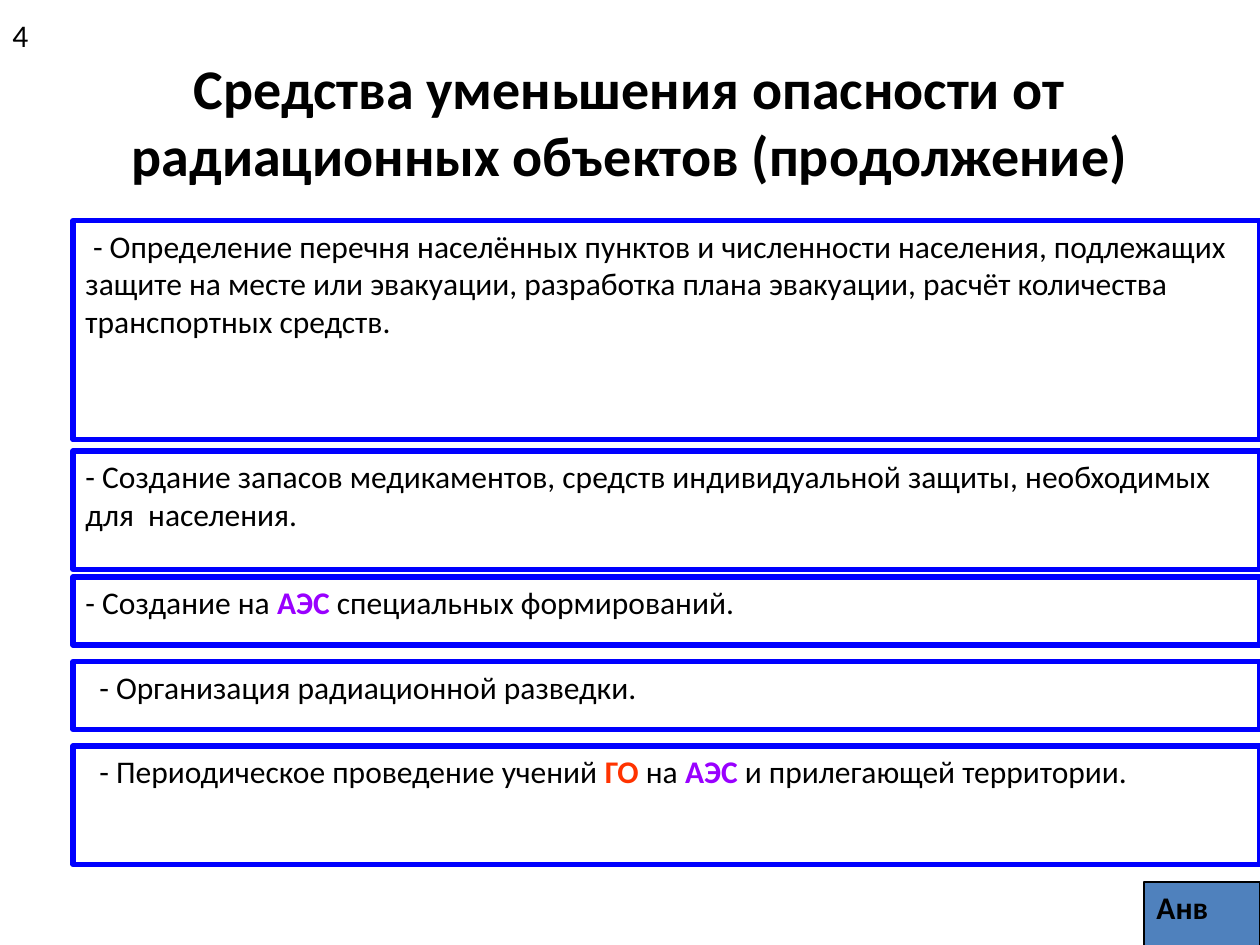
import pptx
import pptx.dml.color
import pptx.enum.shapes
import pptx.enum.text
import pptx.util
from pptx.util import Inches

COLORS = {
    "text": "000000",
    "frame": "0000FF",
    "plant": "9900FF",
    "defence": "FF3300",
    "badge": "4F81BD",
}
FONT = "Calibri"
MEASURE_LEFT, MEASURE_WIDTH = 0.58, 9.42
PLANT = ("АЭС", "plant")
MEASURES = [
    (1.75, 1.74, 0.06, [
        "- Определение перечня населённых пунктов и численности населения, "
        "подлежащих защите на месте или эвакуации, разработка плана эвакуации, "
        "расчёт количества транспортных средств."]),
    (3.58, 0.94, 0, [
        "- Создание запасов медикаментов, средств индивидуальной защиты, "
        "необходимых для  населения."]),
    (4.58, 0.54, 0, ["- Создание на ", PLANT, " специальных формирований."]),
    (5.25, 0.54, 0.11, ["- Организация радиационной разведки."]),
    (5.92, 0.94, 0.11, [
        "- Периодическое проведение учений ", ("ГО", "defence"), " на ", PLANT,
        " и прилегающей территории."]),
]


def rgb(name):
    """Return the palette colour with the given name."""
    return pptx.dml.color.RGBColor.from_string(COLORS[name])


def write(shape, parts, size=18, bold=False, align="LEFT", anchor="TOP", indent=0):
    """Fill a shape with one paragraph of plain and highlighted parts."""
    frame = shape.text_frame
    frame.word_wrap = True
    frame.vertical_anchor = pptx.enum.text.MSO_ANCHOR[anchor]
    paragraph = frame.paragraphs[0]
    paragraph.alignment = pptx.enum.text.PP_ALIGN[align]
    if indent:
        paragraph._p.get_or_add_pPr().set("indent", str(Inches(indent)))
    paragraph.font.name = FONT
    paragraph.font.size = pptx.util.Pt(size)
    for part in parts:
        wording, color = (part, "text") if isinstance(part, str) else part
        run = paragraph.add_run()
        run.text = wording
        run.font.name = FONT
        run.font.size = pptx.util.Pt(size)
        run.font.bold = bold or color != "text"
        run.font.color.rgb = rgb(color)


def add_label(slide, box, parts, **style):
    """Add text without a frame."""
    write(slide.shapes.add_textbox(*map(Inches, box)), parts, **style)


def add_box(slide, box, parts, line, weight, fill=None, **style):
    """Add a framed rectangle with text."""
    rectangle = slide.shapes.add_shape(
        pptx.enum.shapes.MSO_SHAPE.RECTANGLE, *map(Inches, box))
    rectangle.shadow.inherit = False
    if fill:
        rectangle.fill.solid()
        rectangle.fill.fore_color.rgb = rgb(fill)
    else:
        rectangle.fill.background()
    rectangle.line.color.rgb = rgb(line)
    rectangle.line.width = pptx.util.Pt(weight)
    write(rectangle, parts, **style)


def main():
    """Build the slide on means of reducing radiation danger."""
    deck = pptx.Presentation()
    deck.slide_width, deck.slide_height = Inches(10), Inches(7.5)
    slide = deck.slides.add_slide(deck.slide_layouts[6])
    add_label(
        slide, (0.75, 0.33, 8.5, 1.25),
        ["Средства уменьшения опасности от радиационных объектов (продолжение)"],
        size=32, bold=True, align="CENTER", anchor="MIDDLE")
    for top, height, indent, parts in MEASURES:
        add_box(slide, (MEASURE_LEFT, top, MEASURE_WIDTH, height), parts,
                "frame", 3, indent=indent)
    add_label(slide, (0, 0.08, 0.5, 0.5), ["4"])
    add_box(slide, (9.08, 7, 0.92, 0.51), ["Анв"], "text", 0.75,
            fill="badge", bold=True)
    deck.save("out.pptx")


if __name__ == "__main__":
    main()
